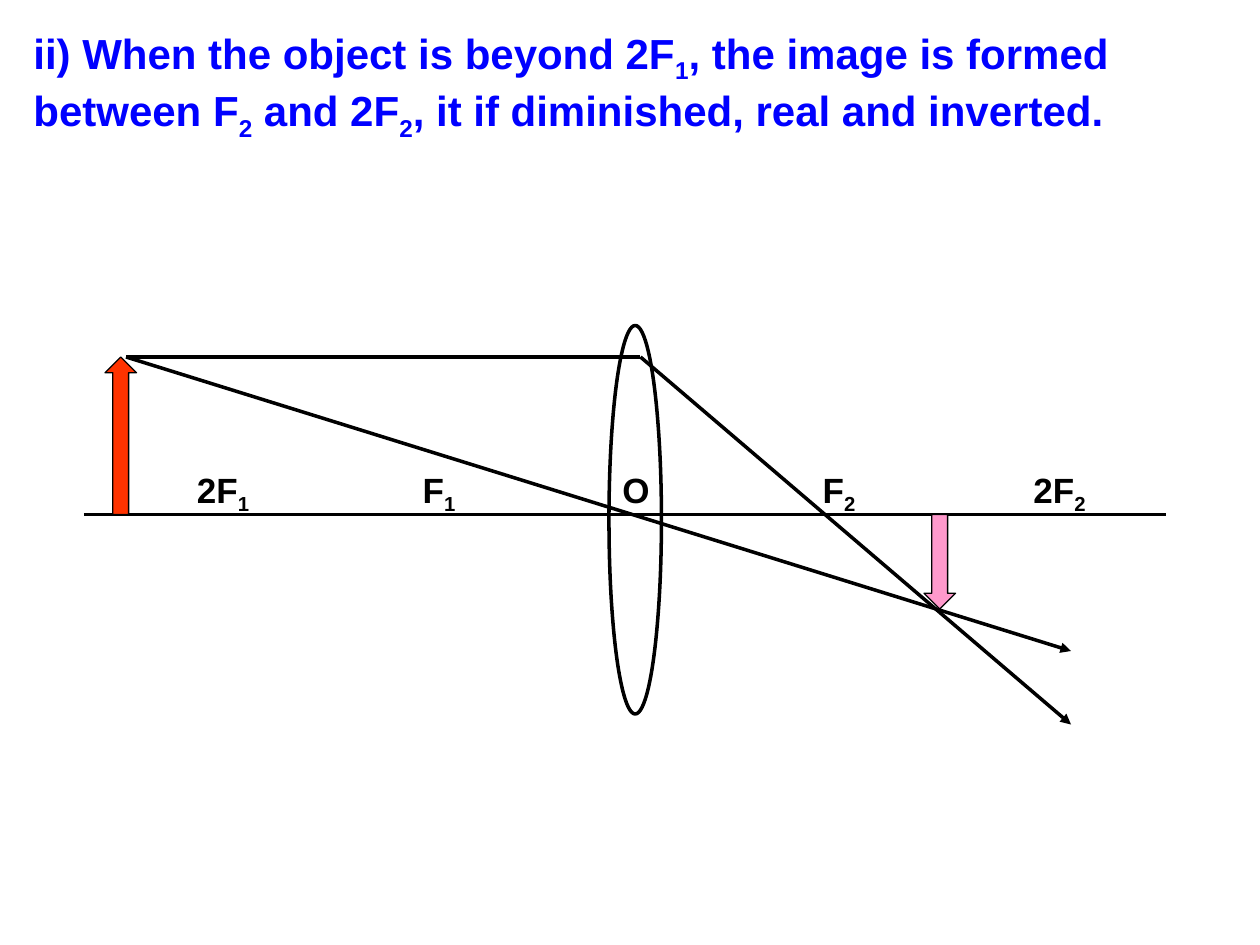
"""Build a slide with the ray diagram of a convex lens, object beyond 2F1."""
from dataclasses import dataclass

from lxml.etree import SubElement as Sub
from pptx import Presentation as Deck
from pptx.dml.color import RGBColor as Rgb
from pptx.enum.shapes import MSO_CONNECTOR as Link, MSO_SHAPE as Kind
from pptx.oxml.ns import qn
from pptx.util import Pt


@dataclass(frozen=True)
class Theme:
    font: str = "Arial"
    ink: str = "000000"
    head: str = "0000FF"
    thing: str = "FF3300"
    image: str = "FF99CC"
    big: int = 24
    small: int = 20
    ray: float = 2
    edge: float = 0.75


THEME = Theme()


def add_text(slide, box, text, size, color, before=0, stops=()):
    """Add bold text in which every second part between underscores is a subscript."""
    frame = slide.shapes.add_textbox(*map(Pt, box)).text_frame
    frame.word_wrap = True
    para = frame.paragraphs[0]
    para.space_before = Pt(before)
    if stops:
        tabs = Sub(para._p.get_or_add_pPr(), qn("a:tabLst"))
        for stop in stops:
            Sub(tabs, qn("a:tab"), pos=str(Pt(stop)), algn="l")
    for i, part in enumerate(text.split("_")):
        if not part:
            continue
        run = para.add_run()
        run.text = part
        font = run.font
        font.name, font.size, font.bold = THEME.font, Pt(size), True
        font.color.rgb = Rgb.from_string(color)
        if i % 2:
            run._r.get_or_add_rPr().set("baseline", "-25000")


def add_form(slide, kind, box, width, fill=None):
    """Add an outlined preset shape, filled if a colour is given."""
    form = slide.shapes.add_shape(kind, *map(Pt, box))
    form.shadow.inherit = False
    if fill:
        form.fill.solid()
        form.fill.fore_color.rgb = Rgb.from_string(fill)
    else:
        form.fill.background()
    form.line.color.rgb = Rgb.from_string(THEME.ink)
    form.line.width = Pt(width)


def add_ray(slide, start, end, arrow=False):
    """Add a straight line, with an arrowhead at its end if asked."""
    ray = slide.shapes.add_connector(Link.STRAIGHT, *map(Pt, start + end))
    ray.line.color.rgb = Rgb.from_string(THEME.ink)
    ray.line.width = Pt(THEME.ray)
    props = ray.element.spPr
    if arrow:
        Sub(props.find(qn("a:ln")), qn("a:tailEnd"), type="triangle")
    Sub(props, qn("a:effectLst"))


def main():
    """Draw the slide and save it."""
    deck = Deck()
    deck.slide_width, deck.slide_height = Pt(720), Pt(540)
    slide = deck.slides.add_slide(deck.slide_layouts[6])
    axis, top = 294, 204
    tip, bend = (72, top), (366, top)

    add_text(slide, (12, 12, 708, 504),
             "ii) When the object is beyond 2F_1_, the image is formed between "
             "F_2_ and 2F_2_, it if diminished, real and inverted.",
             THEME.big, THEME.head, before=4.8)
    add_form(slide, Kind.OVAL, (348, 186, 30, 222), THEME.ray)
    add_ray(slide, (48, axis), (666, axis))
    add_text(slide, (84, 264, 588, 31), "\t2F_1_\tF_1_\tO\tF_2_\t2F_2",
             THEME.small, THEME.ink, stops=(21.5, 150.5, 264.5, 379, 499.5))
    add_form(slide, Kind.UP_ARROW, (60, top, 18, axis - top), THEME.edge, THEME.thing)
    add_ray(slide, tip, bend)
    add_ray(slide, bend, (612, 414), arrow=True)
    add_ray(slide, tip, (612, 372), arrow=True)
    add_form(slide, Kind.DOWN_ARROW, (528, axis, 18, 54), THEME.edge, THEME.image)
    deck.save("out.pptx")


if __name__ == "__main__":
    main()
